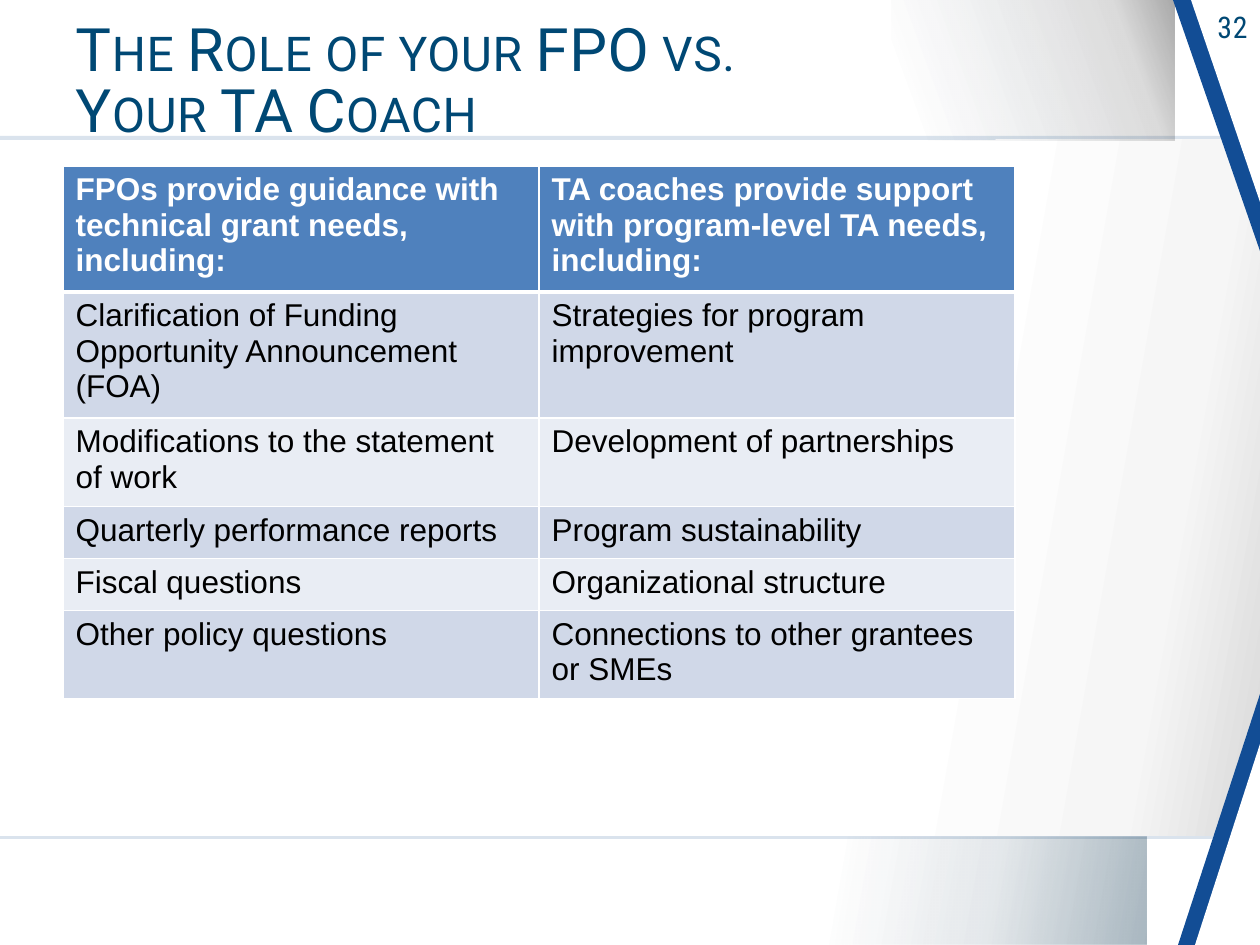
from dataclasses import dataclass
from typing import NamedTuple

from lxml import etree
from pptx import Presentation
from pptx.dml.color import RGBColor
from pptx.enum.shapes import MSO_SHAPE
from pptx.enum.text import MSO_ANCHOR, PP_ALIGN
from pptx.oxml import parse_xml
from pptx.oxml.ns import nsdecls
from pptx.util import Pt

RECTANGLE = MSO_SHAPE.RECTANGLE
TRIANGLE = MSO_SHAPE.ISOSCELES_TRIANGLE
MIDDLE, TOP = MSO_ANCHOR.MIDDLE, MSO_ANCHOR.TOP
LEFT, RIGHT = PP_ALIGN.LEFT, PP_ALIGN.RIGHT
EMU_PER_PX = 914400 / 126


@dataclass(frozen=True)
class Theme:
    title: str = "004874"
    stripe: str = "124D95"
    rule: str = "275A99"
    shade: str = "002C47"
    black: str = "000000"
    white: str = "FFFFFF"
    header: str = "4F81BD"
    bands: tuple[str, str] = ("D0D8E8", "E9EDF4")
    title_font: str = "Roboto"
    number_font: str = "Roboto Condensed"
    body_font: str = "Arial"
    title_size: float = 34.2
    number_size: float = 17
    body_size: float = 18


THEME = Theme()


class Box(NamedTuple):
    left: int
    top: int
    width: int
    height: int


class Stop(NamedTuple):
    position: int
    color: str
    opacity: int = 100


class Panel(NamedTuple):
    box: Box
    angle: int
    stops: tuple[Stop, ...]


class Wedge(NamedTuple):
    """A right triangle on the right edge, pointing down or up."""
    box: Box
    color: str
    points_down: bool


PANELS = (
    Panel(Box(0, 136, 1260, 703), 0, (Stop(0, THEME.rule, 16), Stop(100, THEME.rule, 16))),
    Panel(Box(0, 140, 1260, 696), 10,
          (Stop(0, THEME.white), Stop(72, THEME.white), Stop(90, "F6F6F6"), Stop(100, "D9D9D9"))),
    Panel(Box(810, 837, 337, 108), 10,
          (Stop(10, THEME.shade, 0), Stop(56, THEME.shade, 11), Stop(100, THEME.shade, 34))),
    Panel(Box(892, 0, 282, 141), 340,
          (Stop(10, THEME.shade, 0), Stop(81, THEME.black, 14), Stop(100, THEME.black, 34))),
)
WEDGES = (
    Wedge(Box(1173, 0, 87, 251), THEME.stripe, True),
    Wedge(Box(1191, 0, 69, 202), THEME.white, True),
    Wedge(Box(1178, 694, 82, 251), THEME.stripe, False),
    Wedge(Box(1195, 744, 65, 201), THEME.white, False),
)
TABLE_BOX = Box(63, 166, 952, 312)
ROWS = (
    ("FPOs provide guidance with technical grant needs, including:",
     "TA coaches provide support with program-level TA needs, including:"),
    ("Clarification of Funding Opportunity Announcement (FOA)", "Strategies for program improvement"),
    ("Modifications to the statement of work", "Development of partnerships"),
    ("Quarterly performance reports", "Program sustainability"),
    ("Fiscal questions", "Organizational structure"),
    ("Other policy questions", "Connections to other grantees or SMEs"),
)


def px(length: int) -> int:
    return round(length * EMU_PER_PX)


def place(box: Box) -> tuple[int, ...]:
    return tuple(px(length) for length in box)


def add_plain_shape(slide, kind, box: Box):
    shape = slide.shapes.add_shape(kind, *place(box))
    shape.shadow.inherit = False
    shape.line.fill.background()
    return shape


def draw_panel(slide, panel: Panel) -> None:
    shape = add_plain_shape(slide, RECTANGLE, panel.box)
    stops = "".join(
        f'<a:gs pos="{stop.position * 1000}"><a:srgbClr val="{stop.color}">'
        f'<a:alpha val="{stop.opacity * 1000}"/></a:srgbClr></a:gs>'
        for stop in panel.stops)
    gradient = parse_xml(
        f'<a:gradFill {nsdecls("a")} rotWithShape="1"><a:gsLst>{stops}</a:gsLst>'
        f'<a:lin ang="{panel.angle * 60000}" scaled="0"/></a:gradFill>')
    shape.fill.background()
    properties = shape.element.spPr
    properties.replace(properties.find("{*}noFill"), gradient)


def draw_wedge(slide, wedge: Wedge) -> None:
    shape = add_plain_shape(slide, TRIANGLE, wedge.box)
    shape.adjustments[0] = 0 if wedge.points_down else 1
    shape.rotation = 180 if wedge.points_down else 0
    shape.fill.solid()
    shape.fill.fore_color.rgb = RGBColor.from_string(wedge.color)


def write_text(frame, text: str, *, font: str, size: float, color: str, bold=False,
               align=LEFT, anchor=TOP, line_spacing=1.0, tracking=0.0, small_caps=False) -> None:
    frame.word_wrap = True
    frame.vertical_anchor = anchor
    paragraph = frame.paragraphs[0]
    paragraph.text = text
    paragraph.alignment = align
    paragraph.line_spacing = line_spacing
    for run in paragraph.runs:
        run.font.name, run.font.size, run.font.bold = font, Pt(size), bold
        run.font.color.rgb = RGBColor.from_string(color)
        properties = run.font._element
        if tracking:
            properties.set("spc", str(round(tracking * 100)))
        if small_caps:
            properties.set("cap", "small")


def add_text(slide, box: Box, text: str, **text_format) -> None:
    write_text(slide.shapes.add_textbox(*place(box)).text_frame, text, **text_format)


def set_borders(cell, widths: dict[str, int]) -> None:
    properties = cell._tc.get_or_add_tcPr()
    for index, (side, width) in enumerate(widths.items()):
        line = parse_xml(
            f'<a:{side} {nsdecls("a")} w="{Pt(width)}"><a:solidFill>'
            f'<a:srgbClr val="{THEME.white}"/></a:solidFill></a:{side}>')
        properties.insert(index, line)


def draw_table(slide) -> None:
    table = slide.shapes.add_table(len(ROWS), len(ROWS[0]), *place(TABLE_BOX)).table
    table.horz_banding = False
    for row_index, row in enumerate(ROWS):
        is_header = row_index == 0
        fill = THEME.header if is_header else THEME.bands[(row_index - 1) % 2]
        for column_index, text in enumerate(row):
            cell = table.cell(row_index, column_index)
            cell.fill.solid()
            cell.fill.fore_color.rgb = RGBColor.from_string(fill)
            set_borders(cell, {"lnL": 1, "lnR": 1, "lnT": 3 if row_index == 1 else 1,
                               "lnB": 3 if is_header else 1})
            write_text(cell.text_frame, text, font=THEME.body_font, size=THEME.body_size,
                       color=THEME.white if is_header else THEME.black, bold=is_header)


def main() -> None:
    presentation = Presentation()
    presentation.slide_width, presentation.slide_height = px(1260), px(945)
    slide = presentation.slides.add_slide(presentation.slide_layouts[6])
    for panel in PANELS:
        draw_panel(slide, panel)
    for wedge in WEDGES:
        draw_wedge(slide, wedge)
    add_text(slide, Box(1159, 3, 101, 49), "32", font=THEME.number_font, size=THEME.number_size,
             color=THEME.title, align=RIGHT, tracking=0.4)
    add_text(slide, Box(63, 30, 952, 107), "The Role of your FPO vs.\vYour TA Coach",
             font=THEME.title_font, size=THEME.title_size, color=THEME.title, anchor=MIDDLE,
             line_spacing=0.85, tracking=0.4, small_caps=True)
    draw_table(slide)
    presentation.save("out.pptx")


if __name__ == "__main__":
    main()
